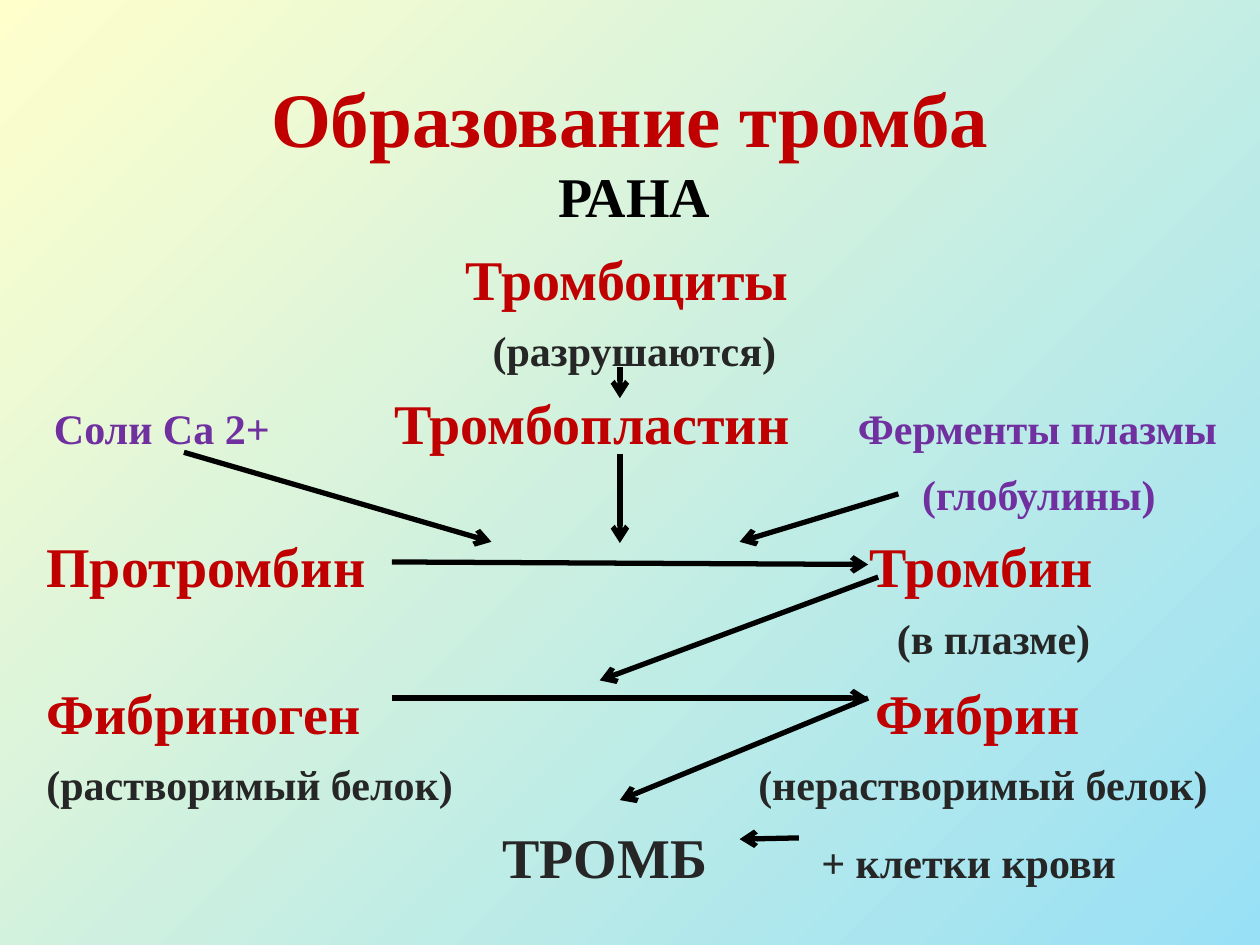
import pptx
import pptx.dml.color
import pptx.enum.shapes
import pptx.enum.text
import pptx.oxml.ns
import pptx.util
from lxml import etree

Inches = pptx.util.Inches
Pt = pptx.util.Pt
RGBColor = pptx.dml.color.RGBColor
qn = pptx.oxml.ns.qn
ALIGN = pptx.enum.text.PP_ALIGN

RED = RGBColor(0xC0, 0x00, 0x00)
PURPLE = RGBColor(0x70, 0x30, 0xA0)
DARK = RGBColor(0x26, 0x26, 0x26)
BLACK = RGBColor(0x00, 0x00, 0x00)
SKY = RGBColor(0x98, 0xE0, 0xF6)
CREAM = RGBColor(0xFF, 0xFF, 0xCC)

FONT = "Times New Roman"
TERM, NOTE = 32, 24

# Centred rows: space before, text, size, colour
HEADING_ROWS = [
    (2, "РАНА", TERM, BLACK),
    (9, "Тромбоциты ", TERM, RED),
    (7.5, "(разрушаются)", NOTE, DARK),
]

# Rows in columns: space before, then (tab stop in inches, text, size, colour)
REACTION_ROWS = [
    (7.5, [(0.06, "Соли Са 2+", NOTE, PURPLE),
           (2.76, "Тромбопластин", TERM, RED),
           (6.44, "Ферменты плазмы", NOTE, PURPLE)]),
    (7.5, [(6.95, "(глобулины)", NOTE, PURPLE)]),
    (7.5, [(0, "Протромбин", TERM, RED), (6.53, "Тромбин", TERM, RED)]),
    (7.5, [(6.75, "(в плазме)", NOTE, DARK)]),
    (9, [(0, "Фибриноген", TERM, RED), (6.58, "Фибрин", TERM, RED)]),
    (7.5, [(0, "(растворимый белок)", NOTE, DARK),
           (5.65, "(нерастворимый белок)", NOTE, DARK)]),
    (7.5, [(3.62, "ТРОМБ", TERM, DARK), (6.15, "+ клетки крови", NOTE, DARK)]),
]

# Start and end of each arrow
ARROWS = [
    ((6.97, 4.58), (4.76, 5.4)),
    ((4.92, 2.91), (4.92, 3.16)),
    ((4.92, 3.6), (4.92, 4.31)),
    ((1.46, 3.59), (3.9, 4.3)),
    ((7.13, 3.92), (5.87, 4.3)),
    ((3.11, 5.54), (6.89, 5.54)),
    ((6.89, 5.54), (4.92, 6.35)),
    ((3.11, 4.46), (6.89, 4.48)),
    ((6.34, 6.65), (5.87, 6.66)),
]


def paint_background(slide):
    fill = slide.background.fill
    fill.gradient()
    fill.gradient_angle = 135
    for stop, color in zip(fill.gradient_stops, (SKY, CREAM)):
        stop.color.rgb = color


def add_frame(slide, left, top, width, height, anchor):
    box = slide.shapes.add_textbox(
        Inches(left), Inches(top), Inches(width), Inches(height))
    frame = box.text_frame
    frame.word_wrap = True
    frame.vertical_anchor = anchor
    return frame


def write(paragraph, text, size=NOTE, color=DARK):
    run = paragraph.add_run()
    run.text = text
    run.font.name = FONT
    run.font.size = Pt(size)
    run.font.bold = True
    run.font.color.rgb = color


def next_paragraph(frame, align, space=0):
    """Use the first paragraph while it is empty, then add new ones."""
    first = frame.paragraphs[0]
    paragraph = frame.add_paragraph() if first.runs else first
    paragraph.alignment = align
    paragraph.space_before = Pt(space)
    return paragraph


def set_tab_stops(paragraph, positions):
    properties = paragraph._p.get_or_add_pPr()
    tab_list = etree.SubElement(properties, qn("a:tabLst"))
    for position in positions:
        etree.SubElement(tab_list, qn("a:tab"),
                         pos=str(Inches(position)), algn="l")


def add_reaction_row(frame, space, cells):
    paragraph = next_paragraph(frame, ALIGN.LEFT, space)
    set_tab_stops(paragraph, [cell[0] for cell in cells if cell[0]])
    for position, text, size, color in cells:
        write(paragraph, "\t" + text if position else text,
              size=size, color=color)


def add_arrow(slide, start, end):
    arrow = slide.shapes.add_connector(
        pptx.enum.shapes.MSO_CONNECTOR.STRAIGHT,
        *(Inches(value) for value in start + end))
    arrow.line.color.rgb = BLACK
    arrow.line.width = Pt(3)
    etree.SubElement(arrow.line._get_or_add_ln(), qn("a:tailEnd"), type="arrow")
    etree.SubElement(arrow._element.spPr, qn("a:effectLst"))


def main():
    deck = pptx.Presentation()
    deck.slide_width, deck.slide_height = Inches(10), Inches(7.5)
    slide = deck.slides.add_slide(deck.slide_layouts[6])
    paint_background(slide)

    anchors = pptx.enum.text.MSO_ANCHOR
    title = add_frame(slide, 0.5, 0.3, 9, 1.25, anchors.MIDDLE)
    write(next_paragraph(title, ALIGN.CENTER), "Образование тромба",
          size=44, color=RED)

    scheme = add_frame(slide, 0.27, 1.23, 9.53, 6.06, anchors.TOP)
    for space, text, size, color in HEADING_ROWS:
        write(next_paragraph(scheme, ALIGN.CENTER, space), text,
              size=size, color=color)
    for space, cells in REACTION_ROWS:
        add_reaction_row(scheme, space, cells)

    for start, end in ARROWS:
        add_arrow(slide, start, end)
    deck.save("out.pptx")


if __name__ == "__main__":
    main()
